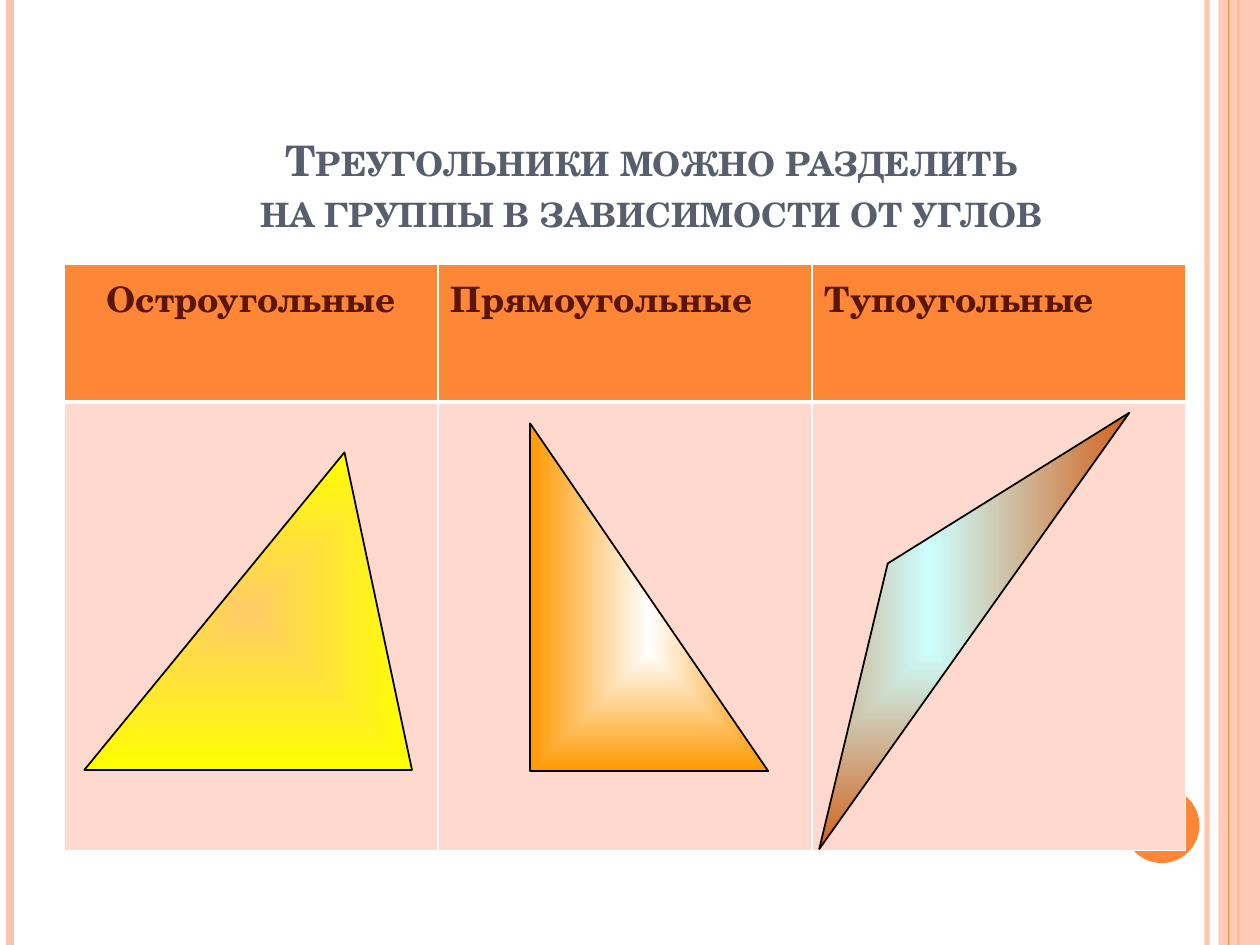
from lxml import etree
from pptx import Presentation
from pptx.dml.color import RGBColor
from pptx.enum.shapes import MSO_CONNECTOR, MSO_SHAPE
from pptx.enum.text import MSO_ANCHOR, MSO_AUTO_SIZE, PP_ALIGN
from pptx.oxml.ns import qn
from pptx.util import Inches, Pt

STRAIGHT = MSO_CONNECTOR.STRAIGHT
RECTANGLE, OVAL = MSO_SHAPE.RECTANGLE, MSO_SHAPE.OVAL
TRIANGLE, RIGHT_TRIANGLE = MSO_SHAPE.ISOSCELES_TRIANGLE, MSO_SHAPE.RIGHT_TRIANGLE
CENTER, LEFT = PP_ALIGN.CENTER, PP_ALIGN.LEFT

FONT = "TeX Gyre Schola"
COLORS = {
    "orange": "FE8637", "peach": "FEC3AE", "cell": "FFD9CE",
    "title": "575F6D", "header": "5A160B", "white": "FFFFFF", "black": "000000",
    "sand": "FFCC66", "yellow": "FFFF00", "amber": "FF9900",
    "ice": "CCFFFF", "rust": "D2611C",
}
WIDTH, HEIGHT = 10, 7.5


def rgb(name):
    return RGBColor.from_string(COLORS[name])


def inches(box):
    return [Inches(value) for value in box]


def add_alpha(fill_parent, percent):
    """Make the solid colour inside an element partly transparent."""
    color = fill_parent.find(".//" + qn("a:srgbClr"))
    etree.SubElement(color, qn("a:alpha")).set("val", str(percent * 1000))


def write_text(para, text, size, color, align=LEFT, small_caps=False):
    para.alignment = align
    for index, line in enumerate(text.split("\n")):
        if index:
            para.add_line_break()
        span = para.add_run()
        span.text = line
        span.font.name, span.font.size, span.font.bold = FONT, Pt(size), True
        span.font.color.rgb = rgb(color)
        if small_caps:
            span.font._element.set("cap", "small")


def add_solid(page, kind, box, color):
    shape = page.shapes.add_shape(kind, *inches(box))
    shape.shadow.inherit = False
    shape.fill.solid()
    shape.fill.fore_color.rgb = rgb(color)
    shape.line.fill.background()
    return shape


def add_stripe(page, x, color, width, alpha=None):
    stripe = page.shapes.add_connector(STRAIGHT, *inches((x, 0, x, HEIGHT)))
    stripe.line.color.rgb = rgb(color)
    stripe.line.width = Pt(width)
    properties = stripe._element.spPr
    if alpha:
        add_alpha(properties, alpha)
    etree.SubElement(properties, qn("a:effectLst"))


def add_frame(page):
    """Vertical stripes along both edges and the round mark."""
    add_stripe(page, 9.58, "peach", 3, alpha=93)
    add_stripe(page, 0.08, "peach", 4.5)
    add_stripe(page, 9.83, "orange", 1.5)
    band = add_solid(page, RECTANGLE, (9.67, 0, 0.33, HEIGHT), "peach")
    add_alpha(band._element.spPr, 87)
    add_stripe(page, 9.75, "orange", 0.75)
    add_solid(page, OVAL, (8.92, 6.25, 0.6, 0.6), "orange")


def add_title(page, box, text):
    title = page.shapes.title
    title.left, title.top, title.width, title.height = inches(box)
    frame = title.text_frame
    frame.auto_size = MSO_AUTO_SIZE.NONE
    frame.word_wrap = True
    frame.vertical_anchor = MSO_ANCHOR.BOTTOM
    write_text(frame.paragraphs[0], text, 24, "title", CENTER, small_caps=True)


def set_borders(cell, bottom):
    properties = cell._tc.get_or_add_tcPr()
    for side, width in (("L", 1), ("R", 1), ("T", 1), ("B", bottom)):
        border = etree.SubElement(properties, qn("a:ln" + side), w=str(Pt(width)))
        fill = etree.SubElement(border, qn("a:solidFill"))
        etree.SubElement(fill, qn("a:srgbClr"), val=COLORS["white"])


def add_groups_table(page, box, header_height, headings):
    """Header row with the group names above one row of empty cells."""
    left, top, width, height = box
    table = page.shapes.add_table(2, len(headings), *inches(box)).table
    for column in table.columns:
        column.width = Inches(width / len(headings))
    table.rows[0].height = Inches(header_height)
    table.rows[1].height = Inches(height - header_height)
    for index, (heading, align) in enumerate(headings):
        for row, color, bottom in ((0, "orange", 3), (1, "cell", 1)):
            cell = table.cell(row, index)
            set_borders(cell, bottom)
            cell.fill.solid()
            cell.fill.fore_color.rgb = rgb(color)
        write_text(table.cell(0, index).text_frame.paragraphs[0],
                   heading, 20, "header", align)


def add_triangle(page, cell_box, kind, offset, size, colors, apex=None, rotation=0):
    """Triangle with a gradient from its centre, placed from a cell's corner."""
    box = (cell_box[0] + offset[0], cell_box[1] + offset[1], *size)
    shape = page.shapes.add_shape(kind, *inches(box))
    shape.shadow.inherit = False
    shape.rotation = rotation
    if apex is not None:
        shape.adjustments[0] = apex
    shape.line.color.rgb = rgb("black")
    shape.line.width = Pt(1)
    shape.fill.gradient()
    for stop, color, position in zip(shape.fill.gradient_stops, colors, (0, 1)):
        stop.color.rgb = rgb(color)
        stop.position = position
    gradient = shape._element.spPr.find(qn("a:gradFill"))
    gradient.set("rotWithShape", "0")
    gradient.remove(gradient.find(qn("a:lin")))
    centre = etree.SubElement(gradient, qn("a:path"), attrib={"path": "shape"})
    etree.SubElement(centre, qn("a:fillToRect"), l="50000", t="50000", r="50000", b="50000")


def add_triangles(page, box):
    """One triangle for each column of the table body."""
    left, top, width, height = box
    column = width / 3
    cells = [(left + index * column, top, column, height) for index in range(3)]
    add_triangle(page, cells[0], TRIANGLE, (0.16, 0.4), (2.6, 2.52),
                 ("sand", "yellow"), apex=0.794)
    add_triangle(page, cells[1], RIGHT_TRIANGLE, (0.73, 0.17), (1.89, 2.76),
                 ("white", "amber"))
    add_triangle(page, cells[2], TRIANGLE, (-1.19, 1.13), (4.25, 0.87),
                 ("ice", "rust"), apex=0.509, rotation=305.4)


def main():
    deck = Presentation()
    deck.slide_width, deck.slide_height = Inches(WIDTH), Inches(HEIGHT)
    page = deck.slides.add_slide(deck.slide_layouts[5])
    add_frame(page)
    add_title(page, (0.75, 0.67, 8.84, 1.25),
              "Треугольники можно разделить\nна группы в зависимости от углов")
    left, top, width, height = table_box = (0.51, 2.1, 8.9, 4.65)
    header = 1.09
    add_groups_table(page, table_box, header, (
        ("Остроугольные", CENTER), ("Прямоугольные", LEFT), ("Тупоугольные", LEFT)))
    add_triangles(page, (left, top + header, width, height - header))
    deck.save("out.pptx")


if __name__ == "__main__":
    main()
